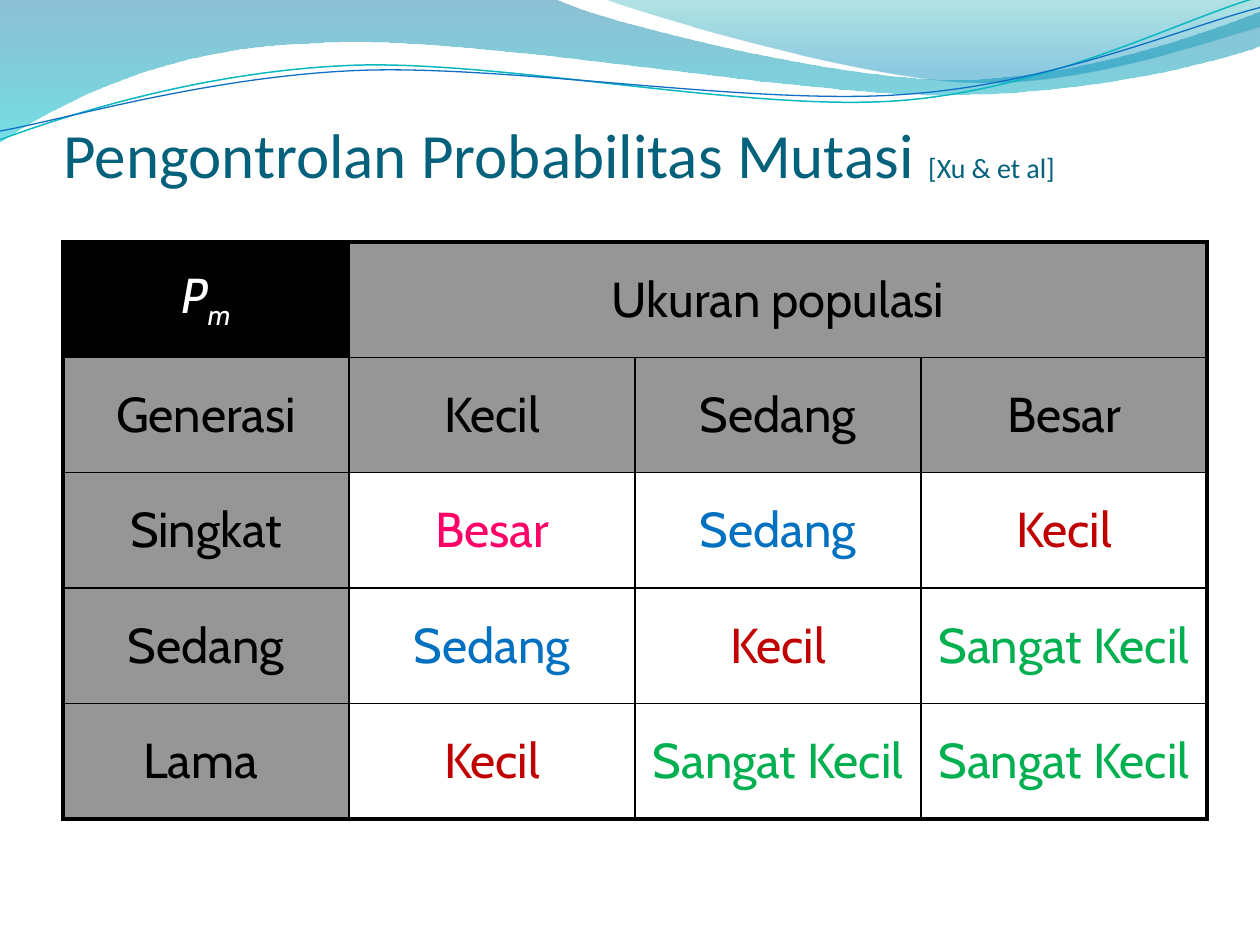
from lxml import etree
from pptx import Presentation
from pptx.dml.color import RGBColor
from pptx.enum.text import MSO_ANCHOR, PP_ALIGN
from pptx.oxml.ns import qn
from pptx.util import Inches, Pt

MIDDLE, BOTTOM = MSO_ANCHOR.MIDDLE, MSO_ANCHOR.BOTTOM
CENTER = PP_ALIGN.CENTER

BLACK = RGBColor(0x00, 0x00, 0x00)
WHITE = RGBColor(0xFF, 0xFF, 0xFF)
GRAY = RGBColor(0x96, 0x96, 0x96)
TITLE = RGBColor(0x04, 0x61, 0x7B)
PINK = RGBColor(0xFF, 0x00, 0x66)
BLUE = RGBColor(0x00, 0x70, 0xC0)
RED = RGBColor(0xC0, 0x00, 0x00)
GREEN = RGBColor(0x00, 0xB0, 0x50)
DEEP = RGBColor(0x00, 0x74, 0xA1)
AQUA = RGBColor(0x00, 0xC6, 0xCF)
TEAL = RGBColor(0x00, 0xA1, 0xA9)
SKY = RGBColor(0x00, 0x8B, 0xBF)
CYAN = RGBColor(0x0A, 0xB8, 0xBF)
ROYAL = RGBColor(0x0F, 0x6F, 0xC6)

WIDTH, HEIGHT = Inches(10), Inches(7.5)
UNIT = WIDTH // 100

BANDS = [
    ([(0, 0), (44, -0.1),
      (47.6, 1.7, 66.4, 6.3, 75.8, 6.3), (85.3, 6.3, 95.8, 2.6, 100, 0.9),
      (100.1, 3.6),
      (98.3, 4.4, 87, 7.6, 74.6, 7.5), (62.2, 7.5, 38.2, 2.8, 25.7, 3.4),
      (12.9, 3.6, 4.6, 8.3, -0.1, 11.3)],
     [(0, DEEP, 45), (1, AQUA, 55)]),
    ([(47.9, -0.1),
      (50.9, 1.1, 68.2, 6.2, 76.9, 6.5), (85.6, 6.9, 96.1, 3.2, 100, 2.1),
      (100, 0)],
     [(0, TEAL, 30), (0.8, SKY, 45)]),
]
WAVES = [
    ([(0, 11.1),
      (4.8, 9.3, 15.8, 5.7, 27.7, 5.2), (39.5, 4.7, 59.3, 8.9, 71.3, 8),
      (83.3, 7.1, 93.8, 1.5, 99.8, -0.2)], CYAN, 0.85),
    ([(0, 10.4),
      (4.7, 9.6, 16.4, 6.1, 28.3, 5.6), (40.3, 5.1, 59.7, 8.4, 71.7, 7.5),
      (83.6, 6.7, 94.1, 2.1, 100, 0.6)], ROYAL, 0.75),
]
ROWS = [
    ["P", "Ukuran populasi", "", ""],
    ["Generasi", "Kecil", "Sedang", "Besar"],
    ["Singkat", "Besar", "Sedang", "Kecil"],
    ["Sedang", "Sedang", "Kecil", "Sangat Kecil"],
    ["Lama ", "Kecil", "Sangat Kecil", "Sangat Kecil"],
]
TINTS = {"Besar": PINK, "Sedang": BLUE, "Kecil": RED, "Sangat Kecil": GREEN}


def grid(*spots):
    return [round(spot * UNIT) for spot in spots]


def style(item, **values):
    for name, value in values.items():
        setattr(item, name, value)


def add_run(para, text, color, **font):
    run = para.add_run()
    run.text = text
    style(run.font, **font)
    run.font.color.rgb = color
    return run


def bend(shape, steps):
    lines = iter(list(shape._element.iter(qn("a:lnTo"))))
    for step in steps:
        first = next(lines)
        if len(step) == 6:
            first.tag = qn("a:cubicBezTo")
            for line in (next(lines), next(lines)):
                first.append(line[0])
                line.getparent().remove(line)


def add_path(slide, route, close):
    start, *steps = route
    spots = [grid(*step[i:i + 2])
             for step in steps for i in range(0, len(step), 2)]
    pen = slide.shapes.build_freeform(*grid(*start))
    pen.add_line_segments(spots, close=close)
    shape = pen.convert_to_shape()
    bend(shape, steps)
    shape.shadow.inherit = False
    return shape


def add_band(slide, route, stops):
    shape = add_path(slide, route, True)
    shape.line.fill.background()
    shape.fill.gradient()
    shape.fill.gradient_angle = 270
    for stop, (place, color, alpha) in zip(shape.fill.gradient_stops, stops):
        stop.position = place
        stop.color.rgb = color
        tone = stop._gs.find(qn("a:srgbClr"))
        etree.SubElement(tone, qn("a:alpha"), val=str(alpha * 1000))


def add_wave(slide, route, color, weight):
    shape = add_path(slide, route, False)
    shape.fill.background()
    shape.line.color.rgb = color
    shape.line.width = Pt(weight)


def add_title(slide):
    frame = slide.shapes.add_textbox(*grid(5.05, 2.7, 90, 12.5)).text_frame
    style(frame, word_wrap=True, vertical_anchor=BOTTOM, margin_left=0,
          margin_right=0, margin_top=Inches(0.05), margin_bottom=0)
    para = frame.paragraphs[0]
    for text, size in [("Pengontrolan Probabilitas Mutasi ", 36),
                       ("[Xu & et al]", 16)]:
        add_run(para, text, TITLE, name="Calibri", size=Pt(size))


def add_edges(cell, row, col):
    last = col == 3 or row == 0 and col == 1
    outer = {"L": col == 0, "R": last, "T": row == 0, "B": row == 4}
    for side, thick in outer.items():
        weight = Pt(2.25 if thick else 1)
        edge = etree.SubElement(cell._tc.get_or_add_tcPr(),
                                qn("a:ln" + side), w=str(weight))
        fill = etree.SubElement(edge, qn("a:solidFill"))
        etree.SubElement(fill, qn("a:srgbClr"), val=str(BLACK))


def fill_cell(cell, row, col, text):
    corner = row == col == 0
    head = row < 2 or col == 0
    add_edges(cell, row, col)
    cell.vertical_anchor = MIDDLE
    if head:
        cell.fill.solid()
        cell.fill.fore_color.rgb = BLACK if corner else GRAY
    else:
        cell.fill.background()
    if not text:
        return
    color = WHITE if corner else BLACK if head else TINTS[text]
    font = {"name": "Cabin", "size": Pt(28), "italic": corner}
    para = cell.text_frame.paragraphs[0]
    para.alignment = CENTER
    add_run(para, text, color, **font)
    if corner:
        low = add_run(para, "m", color, **font)
        low.font._element.set("baseline", "-25000")


def add_grid(slide):
    box = grid(5, 19.2, 90.8, 45.8)
    table = slide.shapes.add_table(len(ROWS), len(ROWS[0]), *box).table
    style(table, first_row=False, horz_banding=False)
    table.cell(0, 1).merge(table.cell(0, 3))
    for row, words in enumerate(ROWS):
        for col, text in enumerate(words):
            fill_cell(table.cell(row, col), row, col, text)


def main():
    deck = Presentation()
    style(deck, slide_width=WIDTH, slide_height=HEIGHT)
    slide = deck.slides.add_slide(deck.slide_layouts[6])
    for band in BANDS:
        add_band(slide, *band)
    for wave in WAVES:
        add_wave(slide, *wave)
    add_title(slide)
    add_grid(slide)
    deck.save("out.pptx")


if __name__ == "__main__":
    main()
